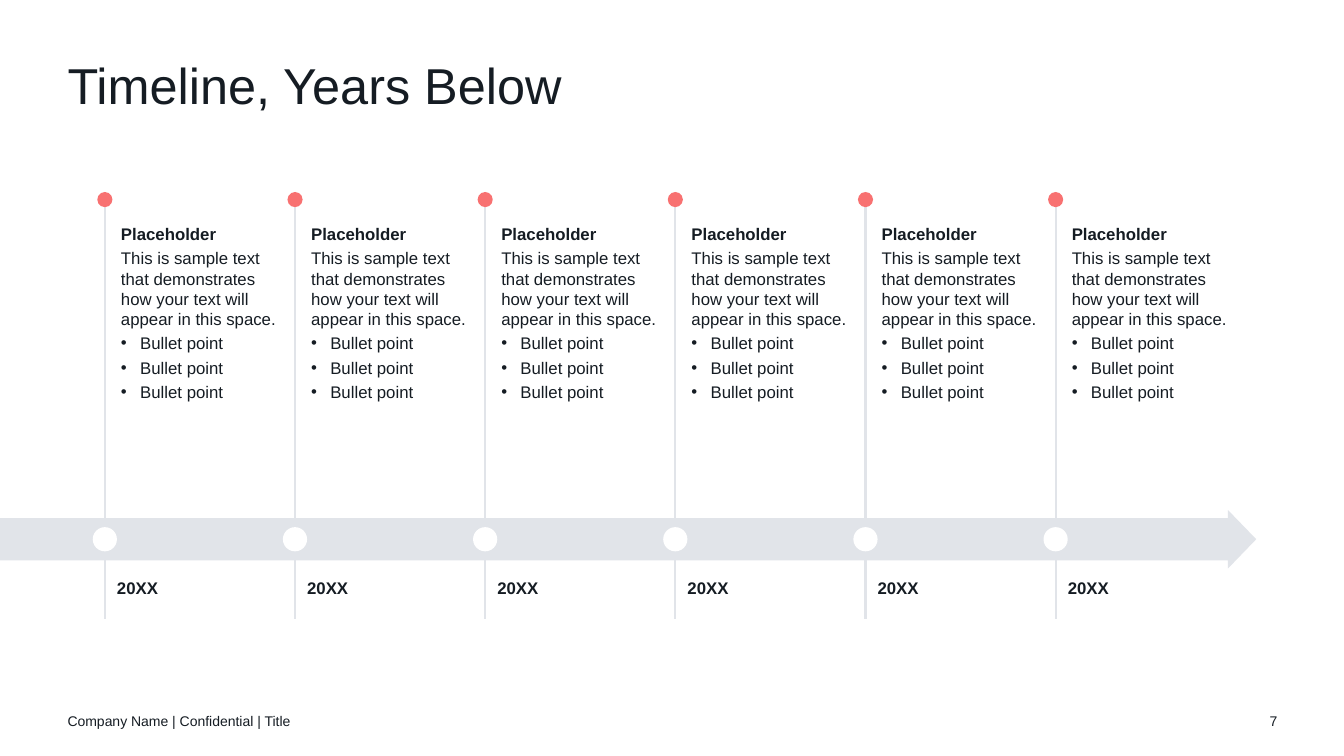
from dataclasses import dataclass

from lxml import etree
from pptx import Presentation
from pptx.dml.color import RGBColor
from pptx.enum.shapes import MSO_CONNECTOR, MSO_SHAPE
from pptx.enum.text import MSO_ANCHOR, PP_ALIGN
from pptx.oxml.ns import qn
from pptx.util import Inches, Pt

STRAIGHT = MSO_CONNECTOR.STRAIGHT
OVAL = MSO_SHAPE.OVAL
TOP, MIDDLE, BOTTOM = MSO_ANCHOR.TOP, MSO_ANCHOR.MIDDLE, MSO_ANCHOR.BOTTOM
LEFT, RIGHT = PP_ALIGN.LEFT, PP_ALIGN.RIGHT


@dataclass(frozen=True)
class Theme:
    font: str = "Arial"
    ink: RGBColor = RGBColor(0x15, 0x1C, 0x23)
    rail: RGBColor = RGBColor(0xE1, 0xE4, 0xE9)
    accent: RGBColor = RGBColor(0xF8, 0x71, 0x71)
    white: RGBColor = RGBColor(0xFF, 0xFF, 0xFF)
    title_size: Pt = Pt(36)
    body_size: Pt = Pt(12)
    footer_size: Pt = Pt(10)


theme = Theme()


def fill_text(shape, box, lines, size, anchor=TOP, align=LEFT, space_after=0):
    shape.left, shape.top, shape.width, shape.height = map(Inches, box)
    frame = shape.text_frame
    frame.word_wrap = True
    frame.vertical_anchor = anchor
    frame.margin_left = frame.margin_right = frame.margin_top = frame.margin_bottom = 0
    frame.text = "\n".join(text for text, style in lines)
    for paragraph, (text, style) in zip(frame.paragraphs, lines):
        if style == "bullet":
            properties = paragraph._p.get_or_add_pPr()
            properties.set("marL", str(Inches(0.19)))
            properties.set("indent", str(Inches(-0.19)))
            etree.SubElement(properties, qn("a:buFont")).set("typeface", theme.font)
            etree.SubElement(properties, qn("a:buChar")).set("char", "•")
        paragraph.alignment = align
        paragraph.space_after = Pt(space_after)
        paragraph.font.name = theme.font
        paragraph.font.size = size
        paragraph.font.bold = style == "bold"
        paragraph.font.color.rgb = theme.ink


def add_dot(center_x, center_y, diameter, color):
    dot = slide.shapes.add_shape(
        OVAL,
        Inches(center_x - diameter / 2),
        Inches(center_y - diameter / 2),
        Inches(diameter),
        Inches(diameter),
    )
    dot.shadow.inherit = False
    dot.fill.solid()
    dot.fill.fore_color.rgb = color
    dot.line.fill.background()


presentation = Presentation()
presentation.slide_width = Inches(13.33)
presentation.slide_height = Inches(7.5)
slide = presentation.slides.add_slide(presentation.slide_layouts[5])

title = slide.shapes.title
fill_text(title, (0.67, 0.6, 12, 0.6), [("Timeline, Years Below", "plain")], theme.title_size)
title.text_frame.paragraphs[0].line_spacing = 0.9

footers = [
    ((0.67, 6.95, 4.5, 0.4), "Company Name | Confidential | Title", LEFT),
    ((12.17, 6.95, 0.5, 0.4), "7", RIGHT),
]
for box, text, align in footers:
    footer = slide.shapes.add_textbox(0, 0, 0, 0)
    fill_text(footer, box, [(text, "plain")], theme.footer_size, MIDDLE, align)

first_x, last_x, count = 1.04, 10.47, 6
milestones = [first_x + index * (last_x - first_x) / (count - 1) for index in range(count)]

for x in milestones:
    stem = slide.shapes.add_connector(STRAIGHT, Inches(x), Inches(2.04), Inches(x), Inches(6.14))
    stem.line.color.rgb = theme.rail
    stem.line.width = Pt(1.5)
    etree.SubElement(stem._element.spPr, qn("a:effectLst"))

axis_y, tip_x, neck_x = 5.35, 12.46, 12.18
head_half, shaft_half = 0.29, 0.21
arrow_points = [
    (tip_x, axis_y),
    (neck_x, axis_y + head_half),
    (neck_x, axis_y + shaft_half),
    (0, axis_y + shaft_half),
    (0, axis_y - shaft_half),
    (neck_x, axis_y - shaft_half),
]
builder = slide.shapes.build_freeform(Inches(neck_x), Inches(axis_y - head_half))
builder.add_line_segments([(Inches(x), Inches(y)) for x, y in arrow_points], close=True)
arrow = builder.convert_to_shape()
arrow.shadow.inherit = False
arrow.fill.solid()
arrow.fill.fore_color.rgb = theme.rail
arrow.line.fill.background()

description = [
    ("Placeholder", "bold"),
    ("This is sample text that demonstrates how your text will appear in this space.", "plain"),
] + [("Bullet point", "bullet")] * 3

for x in milestones:
    add_dot(x, axis_y, 0.24, theme.white)
    add_dot(x, 1.98, 0.15, theme.accent)
    year = slide.shapes.add_textbox(0, 0, 0, 0)
    fill_text(year, (x + 0.12, 5.73, 0.75, 0.2), [("20XX", "bold")], theme.body_size, BOTTOM)
    details = slide.shapes.add_textbox(0, 0, 0, 0)
    fill_text(details, (x + 0.16, 2.22, 1.55, 2.5), description, theme.body_size, space_after=3)

presentation.save("out.pptx")
